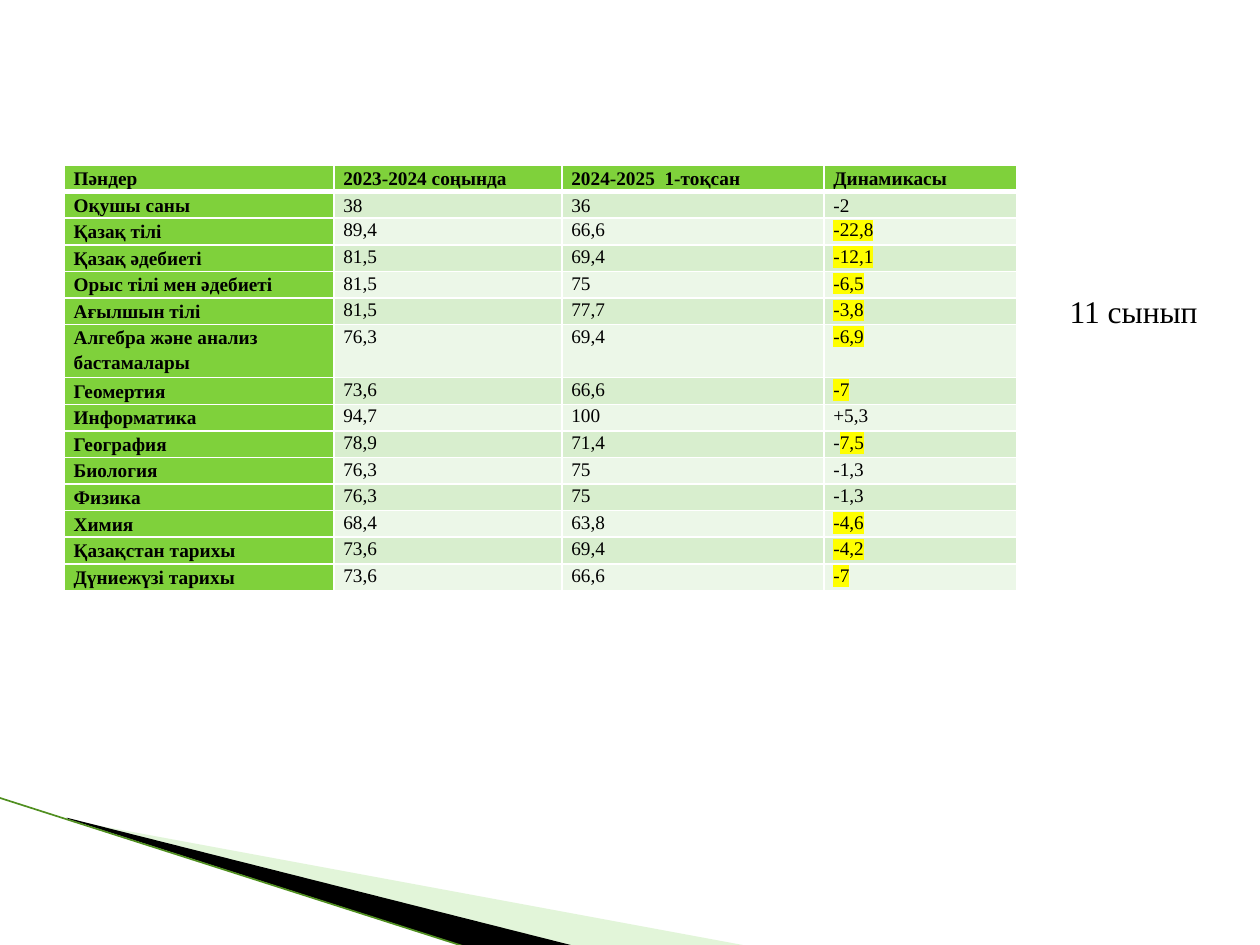
"""Build the slide comparing grade 11 results by subject across two terms."""
from dataclasses import dataclass

from lxml.etree import SubElement
from pptx import Presentation
from pptx.dml.color import RGBColor as RGB
from pptx.enum.shapes import MSO_CONNECTOR as CONN
from pptx.enum.text import MSO_AUTO_SIZE as AUTO, PP_ALIGN as ALIGN
from pptx.oxml.ns import qn
from pptx.util import Inches, Pt


@dataclass(frozen=True)
class Theme:
    font: str = "Times New Roman"
    ink: str = "000000"
    green: str = "7FD13B"
    bands: tuple = ("ECF7E8", "D8EECE")
    border: str = "FFFFFF"
    mark: str = "FFFF00"
    wedge: str = "B8E7A1"
    edge: str = "508F20"
    cell_size: int = 11
    label_size: int = 18


theme = Theme()


def add_run(p, text, size, bold=False, mark=None):
    r = p.add_run()
    r.text = text
    r.font.size, r.font.bold = Pt(size), bold
    r.font.color.rgb = RGB.from_string(theme.ink)
    r.font.name = theme.font
    if mark:
        rpr = r.font._element
        hl = SubElement(rpr, qn("a:highlight"))
        SubElement(hl, qn("a:srgbClr"), val=mark)
        rpr.find(qn("a:solidFill")).addnext(hl)


def add_border(tcpr, side, width):
    ln = SubElement(tcpr, qn(f"a:{side}"), w=str(Pt(width)))
    fill = SubElement(ln, qn("a:solidFill"))
    SubElement(fill, qn("a:srgbClr"), val=theme.border)


prs = Presentation()
prs.slide_width, prs.slide_height = Inches(10), Inches(7.5)
s = prs.slides.add_slide(prs.slide_layouts[6])

wedges = [
    (theme.wedge, 40, (0.78, 5.47, 4.16, 1.58),
     [(0.55, 6.51), (5.95, 7.51), (4.56, 7.51), (0.55, 6.5)]),
    (theme.ink, 100, (-0.06, 6.33, 4.16, 0.92),
     [(0.53, 6.49), (4.57, 7.51), (3.72, 7.52), (0.54, 6.5)]),
]
for color, opacity, frame, points in wedges:
    corners = [(Inches(x), Inches(y)) for x, y in points]
    fb = s.shapes.build_freeform(*corners[0])
    fb.add_line_segments(corners[1:])
    sp = fb.convert_to_shape()
    left, top, width, height = map(Inches, frame)
    outline = next(sp._element.iter(qn("a:path")))
    outline.set("w", str(width))
    outline.set("h", str(height))
    for pt, (x, y) in zip(outline.iter(qn("a:pt")), corners):
        pt.set("x", str(x - left))
        pt.set("y", str(y - top))
    sp.left, sp.top, sp.width, sp.height = left, top, width, height
    sp.shadow.inherit = False
    sp.fill.solid()
    sp.fill.fore_color.rgb = RGB.from_string(color)
    sp.line.fill.background()
    if opacity < 100:
        clr = sp.fill._xPr.find(qn("a:solidFill"))[0]
        SubElement(clr, qn("a:alpha"), val=str(opacity * 1000))

edge = s.shapes.add_connector(
    CONN.STRAIGHT, Inches(-0.01), Inches(6.33), Inches(3.71), Inches(7.52))
edge.line.color.rgb = RGB.from_string(theme.edge)
edge.line.width = Pt(0.95)
SubElement(edge._element.spPr, qn("a:effectLst"))

label = s.shapes.add_textbox(Inches(8.39), Inches(2.25), Inches(1.23), Inches(0.43))
tf = label.text_frame
tf.word_wrap, tf.auto_size = False, AUTO.SHAPE_TO_FIT_TEXT
p = tf.paragraphs[0]
p.line_spacing, p.space_after = 1.07, Pt(8)
add_run(p, "11 сынып", theme.label_size)

rows = [
    ("Пәндер", "2023-2024 соңында", "2024-2025  1-тоқсан", "Динамикасы "),
    ("Оқушы саны", "38", "36", "-2"),
    ("Қазақ тілі", "89,4", "66,6", "*-22,8"),
    ("Қазақ әдебиеті", "81,5", "69,4", "*-12,1"),
    ("Орыс тілі мен әдебиеті", "81,5", "75", "*-6,5"),
    ("Ағылшын тілі", "81,5", "77,7", "*-3,8"),
    ("Алгебра және анализ бастамалары", "76,3", "69,4", "*-6,9"),
    ("Геомертия", "73,6", "66,6", "*-7"),
    ("Информатика", "94,7", "100", "+5,3"),
    ("География", "78,9", "71,4", "-*7,5"),
    ("Биология", "76,3", "75", "-1,3"),
    ("Физика", "76,3", "75", "-1,3"),
    ("Химия", "68,4", "63,8", "*-4,6"),
    ("Қазақстан тарихы", "73,6", "69,4", "*-4,2"),
    ("Дүниежүзі тарихы", "73,6", "66,6", "*-7"),
]
widths = [2.14, 1.81, 2.08, 1.53]
table = s.shapes.add_table(
    len(rows), len(widths), Inches(0.51), Inches(1.31),
    Inches(sum(widths)), Inches(0.1 * len(rows))).table
for col, width in zip(table.columns, widths):
    col.width = Inches(width)

for i, row in enumerate(rows):
    for j, text in enumerate(row):
        cell = table.cell(i, j)
        heading = i == 0 or j == 0
        cell.margin_left = cell.margin_right = Pt(5.4)
        cell.margin_top = cell.margin_bottom = 0
        tcpr = cell._tc.get_or_add_tcPr()
        for side in ("lnL", "lnR", "lnT", "lnB"):
            thick = (i, side) in ((0, "lnB"), (1, "lnT"))
            add_border(tcpr, side, 3 if thick else 1)
        cell.fill.solid()
        cell.fill.fore_color.rgb = RGB.from_string(
            theme.green if heading else theme.bands[i % 2])
        p = cell.text_frame.paragraphs[0]
        p.alignment = ALIGN.JUSTIFY if i < 2 else ALIGN.LEFT
        p.line_spacing = 1.15 if heading or i == 1 else 1.07
        plain, _, marked = text.partition("*")
        if plain:
            add_run(p, plain, theme.cell_size, heading)
        if marked:
            add_run(p, marked, theme.cell_size, heading, theme.mark)

prs.save("out.pptx")
